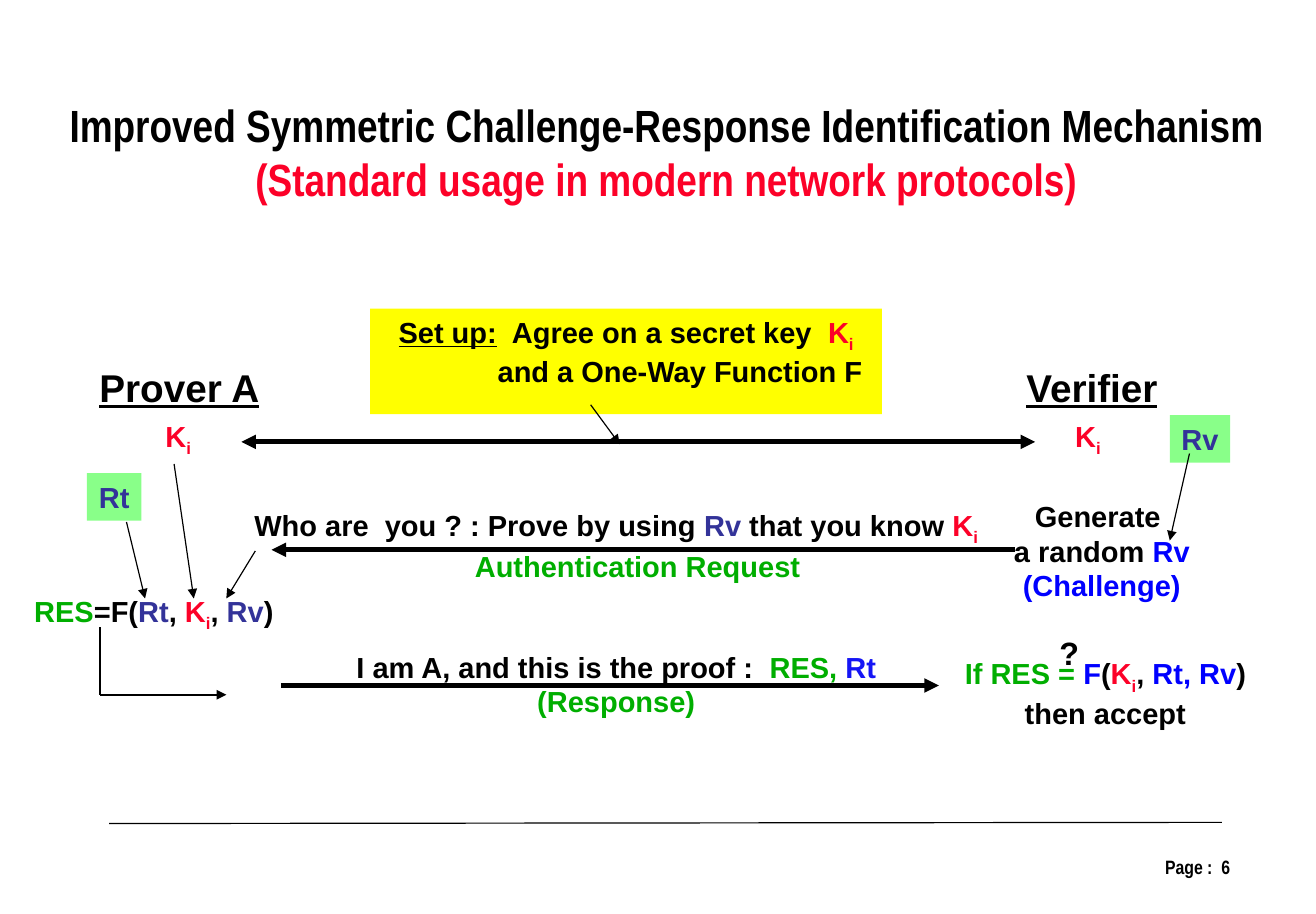
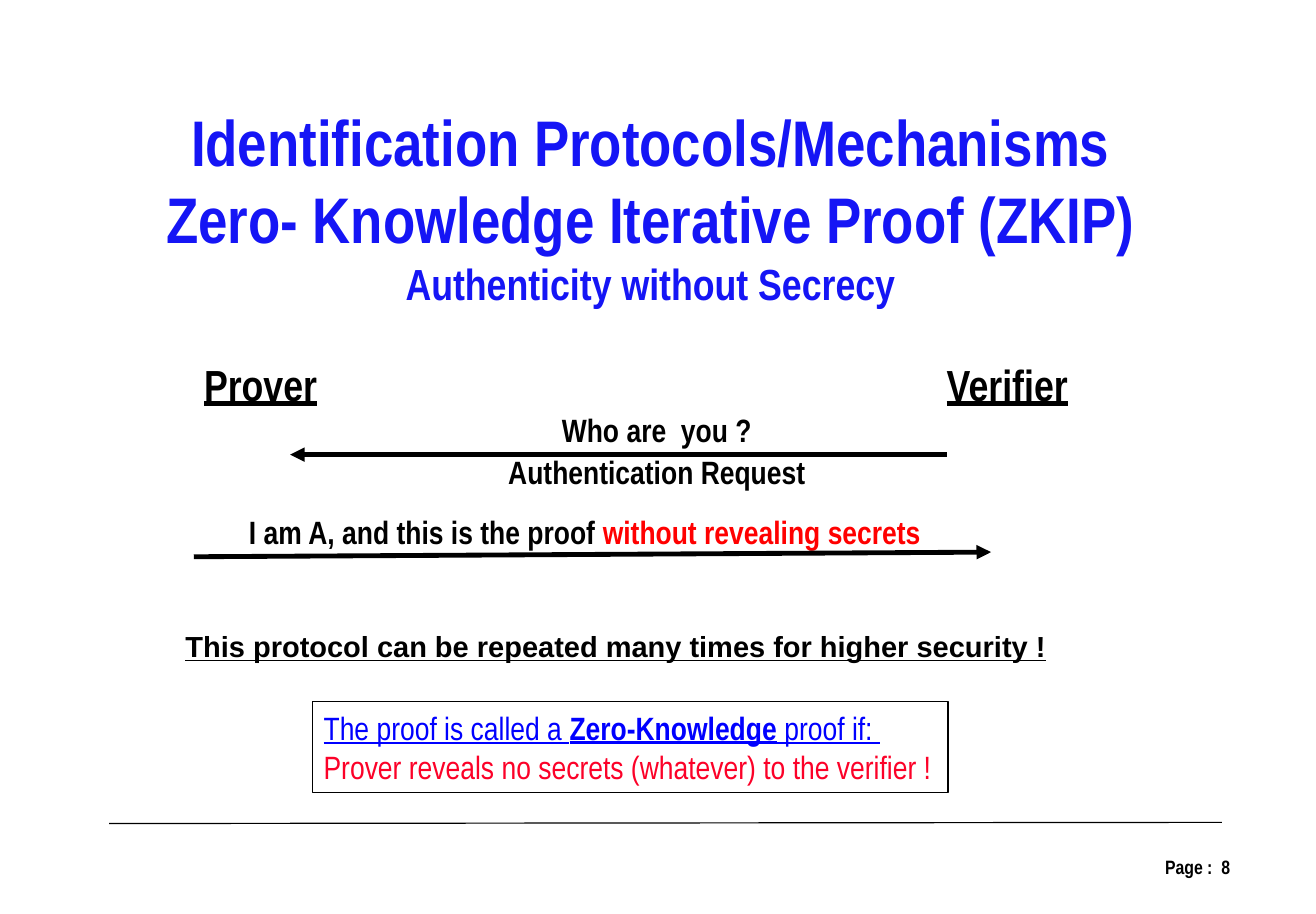
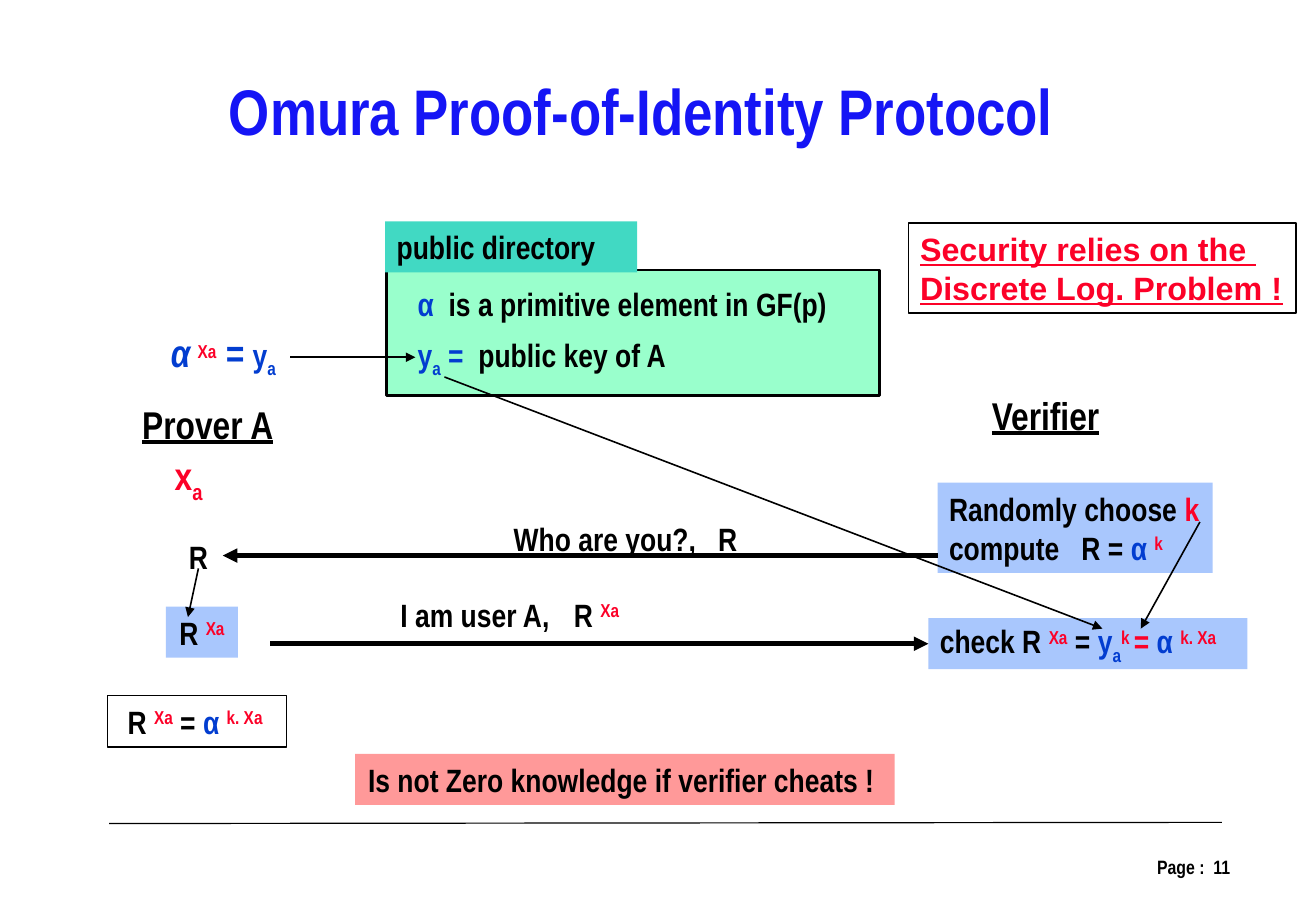
import lxml.etree
import pptx
import pptx.dml.color
import pptx.enum.shapes
import pptx.enum.text
import pptx.oxml.ns
import pptx.util

Inches = pptx.util.Inches
Pt = pptx.util.Pt
RGBColor = pptx.dml.color.RGBColor
ALIGN = pptx.enum.text.PP_ALIGN
ANCHOR = pptx.enum.text.MSO_ANCHOR
FIT = pptx.enum.text.MSO_AUTO_SIZE

BLACK = RGBColor(0x00, 0x00, 0x00)
RED = RGBColor(0xFC, 0x01, 0x28)
PURE_RED = RGBColor(0xFF, 0x00, 0x00)
GREEN = RGBColor(0x00, 0xAE, 0x00)
TITLE_BLUE = RGBColor(0x15, 0x15, 0xF5)
BLUE = RGBColor(0x00, 0x00, 0xFF)
INDIGO = RGBColor(0x33, 0x33, 0x99)
ALPHA_BLUE = RGBColor(0x02, 0x3D, 0xD0)
YELLOW = RGBColor(0xFF, 0xFF, 0x00)
LIGHT_GREEN = RGBColor(0x89, 0xFF, 0x89)
MINT = RGBColor(0x99, 0xFF, 0xCC)
TEAL = RGBColor(0x41, 0xD9, 0xC3)
LIGHT_BLUE = RGBColor(0xA9, 0xC7, 0xFD)
PINK = RGBColor(0xFF, 0x99, 0x99)

WIDE = dict(font="Arial", size=18)


def write(page, place, *lines, box=None, align=ALIGN.CENTER, anchor=ANCHOR.MIDDLE,
          wrap=False, fill=None, outline=None, **style):
    """Put lines in a box; a line is a text or a list of texts and (text, changes)."""
    place = [Inches(length) for length in place]
    if box is not None:
        box.left, box.top, box.width, box.height = place
    elif fill is None and outline is None:
        box = page.shapes.add_textbox(*place)
    else:
        box = page.shapes.add_shape(pptx.enum.shapes.MSO_SHAPE.RECTANGLE, *place)
        box.shadow.inherit = False
        if fill is None:
            box.fill.background()
        else:
            box.fill.solid()
            box.fill.fore_color.rgb = fill
        if outline is None:
            box.line.fill.background()
        else:
            box.line.color.rgb = BLACK
            box.line.width = Pt(outline)

    frame = box.text_frame
    frame.word_wrap = wrap
    frame.auto_size = FIT.NONE if wrap else FIT.SHAPE_TO_FIT_TEXT
    frame.vertical_anchor = anchor
    for number, line in enumerate(lines):
        para = frame.add_paragraph() if number else frame.paragraphs[0]
        para.alignment = align
        for part in [line] if isinstance(line, str) else line:
            text, changes = (part, {}) if isinstance(part, str) else part
            look = dict(font="Arial Narrow", size=20, color=BLACK, bold=True) | style | changes
            span = para.add_run()
            span.text = text
            span.font.name = look["font"]
            span.font.size = Pt(look["size"])
            span.font.color.rgb = look["color"]
            span.font.bold = look["bold"]
            span.font.italic = look.get("italic")
            span.font.underline = look.get("underline")
            if "base" in look:
                span._r.get_or_add_rPr().set("baseline", str(look["base"] * 1000))
    return box


def draw_line(page, start, end, width=0.75, start_head=False, end_head=True):
    line = page.shapes.add_connector(
        pptx.enum.shapes.MSO_CONNECTOR.STRAIGHT, *[Inches(length) for length in start + end])
    line.line.color.rgb = BLACK
    line.line.width = Pt(width)
    for tag, wanted in (("a:headEnd", start_head), ("a:tailEnd", end_head)):
        if wanted:
            lxml.etree.SubElement(line.line._get_or_add_ln(), pptx.oxml.ns.qn(tag), type="triangle")
    lxml.etree.SubElement(line._element.spPr, pptx.oxml.ns.qn("a:effectLst"))
    return line


deck = pptx.Presentation()
deck.slide_width = Inches(11.34)
deck.slide_height = Inches(7.88)

# Title, footer rule and page number of every slide
titles = [
    (6, (0.45, 0.79, 10.58, 1.04), 28, BLACK,
     ["Improved Symmetric Challenge-Response Identification Mechanism",
      [("(Standard usage in modern network protocols)", dict(color=RED))]]),
    (8, (1.29, 0.83, 8.63, 1.9), 40, TITLE_BLUE,
     ["Identification Protocols/Mechanisms",
      "Zero- Knowledge Iterative Proof (ZKIP)",
      [("Authenticity without Secrecy", dict(size=27))]]),
    (11, (1.84, 0.56, 7.37, 0.77), 40, TITLE_BLUE, ["Omura Proof-of-Identity Protocol"]),
]
pages = []
for number, place, size, color, lines in titles:
    page = deck.slides.add_slide(deck.slide_layouts[5])
    write(page, place, *lines, box=page.shapes.title, anchor=ANCHOR.TOP, size=size, color=color)
    write(page, (8.14, 7.32, 2.56, 0.5), f"Page :  {number}",
          align=ALIGN.RIGHT, anchor=ANCHOR.TOP, wrap=True, size=12)
    draw_line(page, (0.94, 7.1), (10.53, 7.09), end_head=False)
    pages.append(page)
challenge_page, zero_knowledge_page, omura_page = pages

# Challenge-response
page = challenge_page
secret_key = [("K", dict(color=RED)), ("i", dict(color=RED, base=-25))]
for left, width, name in ((0.75, 1.59, "Prover A"), (8.74, 1.34, "Verifier")):
    write(page, (left, 3.08, width, 0.51), name, font="Arial", size=24, underline=True)
for left in (1.32, 9.16):
    write(page, (left, 3.58, 0.43, 0.4), secret_key, **WIDE)
for left, top, width, name in ((0.75, 4.08, 0.47, "Rt"), (10.08, 3.58, 0.52, "Rv")):
    write(page, (left, top, width, 0.41), name, fill=LIGHT_GREEN, color=INDIGO, **WIDE)

setup = write(page, (3.19, 2.66, 4.41, 0.91),
              [("Set up:", dict(underline=True)), "  Agree on a secret key  ", *secret_key],
              "and a One-Way Function F",
              fill=YELLOW, anchor=ANCHOR.TOP, wrap=True, **WIDE)
setup.text_frame.paragraphs[1]._p.get_or_add_pPr().set("marL", str(Inches(0.93)))

write(page, (2.06, 4.34, 6.5, 0.41),
      ["Who are  you ? : Prove by using ", ("Rv", dict(color=INDIGO)),
       " that you know ", *secret_key], **WIDE)
write(page, (3.98, 4.67, 3.03, 0.41), "Authentication Request", color=GREEN, **WIDE)
write(page, (8.63, 4.24, 1.73, 1.01), "Generate ",
      ["a random ", ("Rv", dict(color=BLUE))], [("(Challenge)", dict(color=BLUE))], **WIDE)
write(page, (0.18, 5.08, 2.29, 0.41),
      [("RES", dict(color=GREEN)), "=F(", ("Rt", dict(color=INDIGO)), ", ", *secret_key,
       ", ", ("Rv", dict(color=INDIGO)), ")"], **WIDE)
write(page, (2.95, 5.54, 4.72, 0.71),
      ["I am A, and this is the proof :  ", ("RES, ", dict(color=GREEN)),
       ("Rt", dict(color=TITLE_BLUE))],
      [("(Response)", dict(color=GREEN))], **WIDE)
write(page, (8.2, 5.62, 2.65, 0.71),
      [("If RES = ", dict(color=GREEN)), ("F", dict(color=BLUE)), "(", *secret_key, ", ",
       ("Rt, Rv", dict(color=BLUE)), ")"],
      "then accept", **WIDE)
write(page, (9.03, 5.41, 0.37, 0.44), "?", font="Arial")

draw_line(page, (2.08, 3.81), (8.92, 3.81), 3, start_head=True)
draw_line(page, (8.75, 4.74), (2.34, 4.74), 3)
draw_line(page, (2.42, 5.91), (8.09, 5.91), 3)
draw_line(page, (0.86, 5.41), (0.86, 5.99), 1.5, end_head=False)
draw_line(page, (0.86, 5.99), (1.95, 5.99), 1.5)
for start, end in (
    ((5.09, 3.49), (5.34, 3.83)),
    ((2.2, 4.75), (1.95, 5.16)),
    ((1.09, 4.5), (1.25, 5.16)),
    ((1.5, 4), (1.67, 5.16)),
    ((10.25, 3.91), (10.08, 4.66)),
):
    draw_line(page, start, end)

# Zero-knowledge proof
page = zero_knowledge_page
for left, width, name in ((1.65, 1.19, "Prover"), (8.05, 1.26, "Verifier")):
    write(page, (left, 3.03, width, 0.56), name, size=27, underline=True)
write(page, (4.74, 3.48, 1.84, 0.44), "Who are  you ?")
write(page, (4.27, 3.85, 2.78, 0.44), "Authentication Request")
write(page, (2.03, 4.36, 6.02, 0.44),
      ["I am A, and this is the proof ", ("without revealing secrets", dict(color=PURE_RED))])
write(page, (1.5, 5.36, 7.69, 0.41),
      "This protocol can be repeated many times for higher security !",
      align=ALIGN.LEFT, underline=True, **WIDE)
write(page, (2.69, 6.05, 5.48, 0.78),
      ["The proof is called a ", ("Zero-Knowledge", dict(bold=True)), " proof if: "],
      [("Prover reveals no secrets (whatever) to the verifier !",
        dict(color=RED, underline=False))],
      align=ALIGN.LEFT, outline=0.75, color=BLUE, bold=False, underline=True)
draw_line(page, (8.16, 3.92), (2.5, 3.92), 3)
draw_line(page, (1.67, 4.8), (8.54, 4.76), 3)

# Omura protocol
page = omura_page
alpha = ("α ", dict(color=ALPHA_BLUE))
power_xa = ("Xa", dict(color=RED, base=30))
public_key = [("y", dict(color=ALPHA_BLUE)), ("a", dict(color=ALPHA_BLUE, base=-25))]

write(page, (3.33, 2.33, 4.25, 1.08), fill=MINT, outline=1.5, wrap=True)
write(page, (3.5, 2.4, 3.78, 0.44),
      [("α", dict(color=ALPHA_BLUE)), "  is a primitive element in GF(p)"], align=ALIGN.LEFT)
write(page, (3.5, 2.8, 4.08, 0.56),
      [*public_key, (" = ", dict(color=ALPHA_BLUE)), " public key of A"],
      align=ALIGN.LEFT, wrap=True)
write(page, (3.32, 1.91, 2.17, 0.44), "public directory", align=ALIGN.LEFT, wrap=True, fill=TEAL)
write(page, (7.83, 1.92, 3.34, 0.78), "Security relies on the ", "Discrete Log. Problem !",
      align=ALIGN.LEFT, outline=1, font="Arial", color=RED, underline=True)

write(page, (1.12, 3.41, 1.34, 0.5), "Prover A", size=24, underline=True)
write(page, (8.44, 3.33, 1.14, 0.5), "Verifier", size=24, underline=True)
write(page, (1.33, 2.8, 1.19, 0.51),
      [("α", dict(size=24, italic=True)), " ", power_xa,
       (" = ", dict(size=24, italic=True)), *public_key], color=ALPHA_BLUE)
write(page, (1.4, 3.87, 0.45, 0.51), ["x", ("a", dict(base=-25))], size=24, color=RED)
write(page, (1.5, 4.58, 0.42, 0.44), "R")
write(page, (1.43, 5.23, 0.62, 0.44), ["R ", power_xa], fill=LIGHT_BLUE)
write(page, (0.93, 6, 1.54, 0.44),
      ["R ", power_xa, " = ", alpha, ("k. Xa ", dict(color=RED, base=30))], outline=0.75)

write(page, (4.3, 4.42, 2.18, 0.44), "Who are you?,   R")
write(page, (3.35, 5.08, 1.55, 0.44), "I am user A, ")
write(page, (4.83, 5.08, 0.62, 0.44), ["R ", power_xa])
write(page, (8.08, 4.16, 2.37, 0.78),
      ["Randomly choose ", ("k", dict(color=RED))],
      ["compute   R = ", alpha, ("k", dict(color=RED, base=30))],
      align=ALIGN.LEFT, fill=LIGHT_BLUE)
check = write(page, (8, 5.33, 2.75, 0.44),
              ["check R ", power_xa, " = ", *public_key, ("k ", dict(color=RED, base=30)),
               ("= ", dict(color=RED)), alpha, ("k. Xa", dict(color=RED, base=30))],
              align=ALIGN.LEFT, wrap=True, fill=LIGHT_BLUE)
write(page, (3.06, 6.5, 4.65, 0.44), "Is not Zero knowledge if verifier cheats ! ", fill=PINK)

draw_line(page, (8.08, 4.79), (1.92, 4.79), 3)
response = draw_line(page, (2.33, 5.55), (8, 5.55), 3)
response.end_connect(check, 1)
for start, end in (
    ((2.5, 3.08), (3.58, 3.08)),
    ((1.71, 4.9), (1.62, 5.32)),
    ((3.83, 3.25), (9.5, 5.42)),
    ((10.34, 4.5), (9.83, 5.42)),
):
    draw_line(page, start, end, 1)

deck.save("out.pptx")
